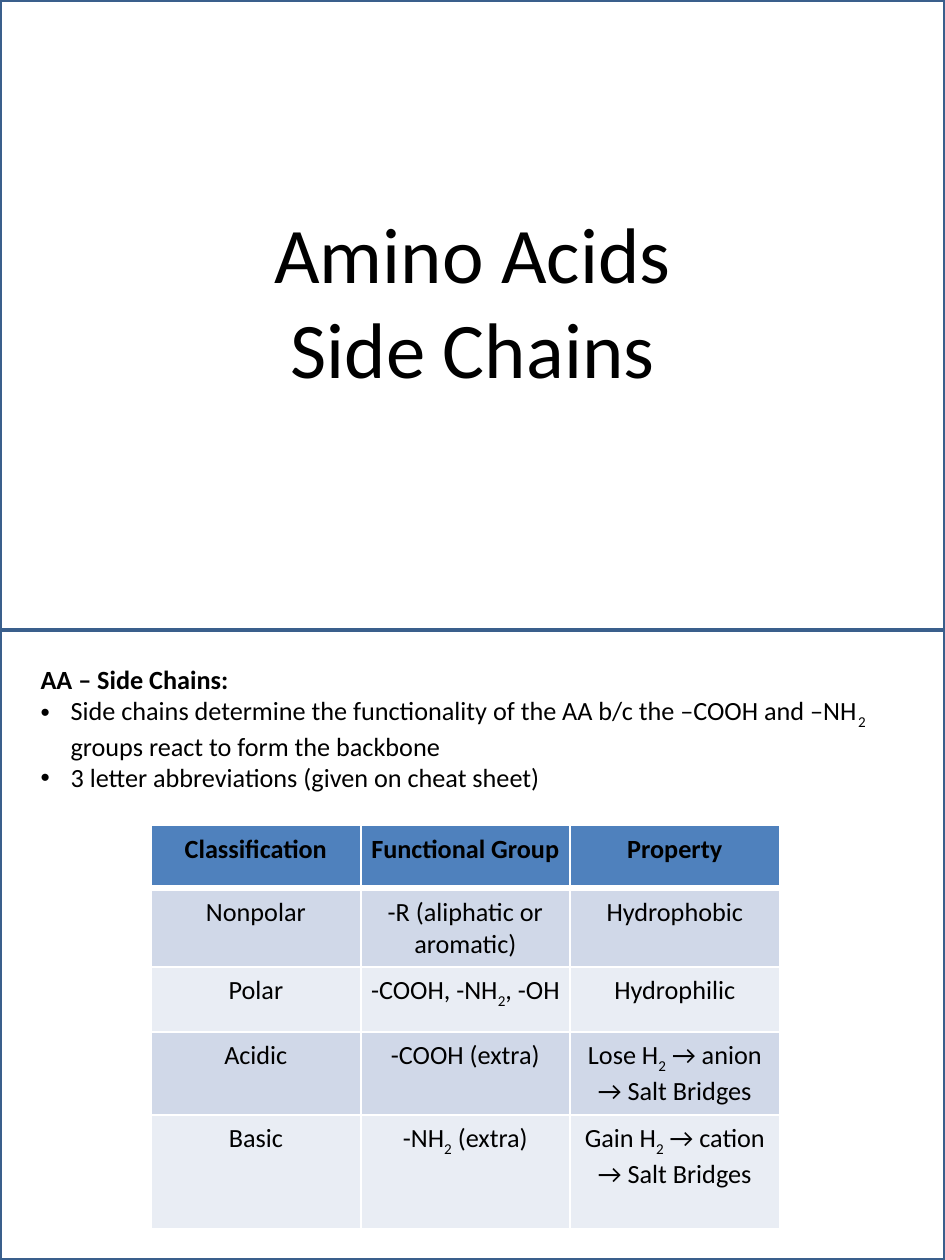
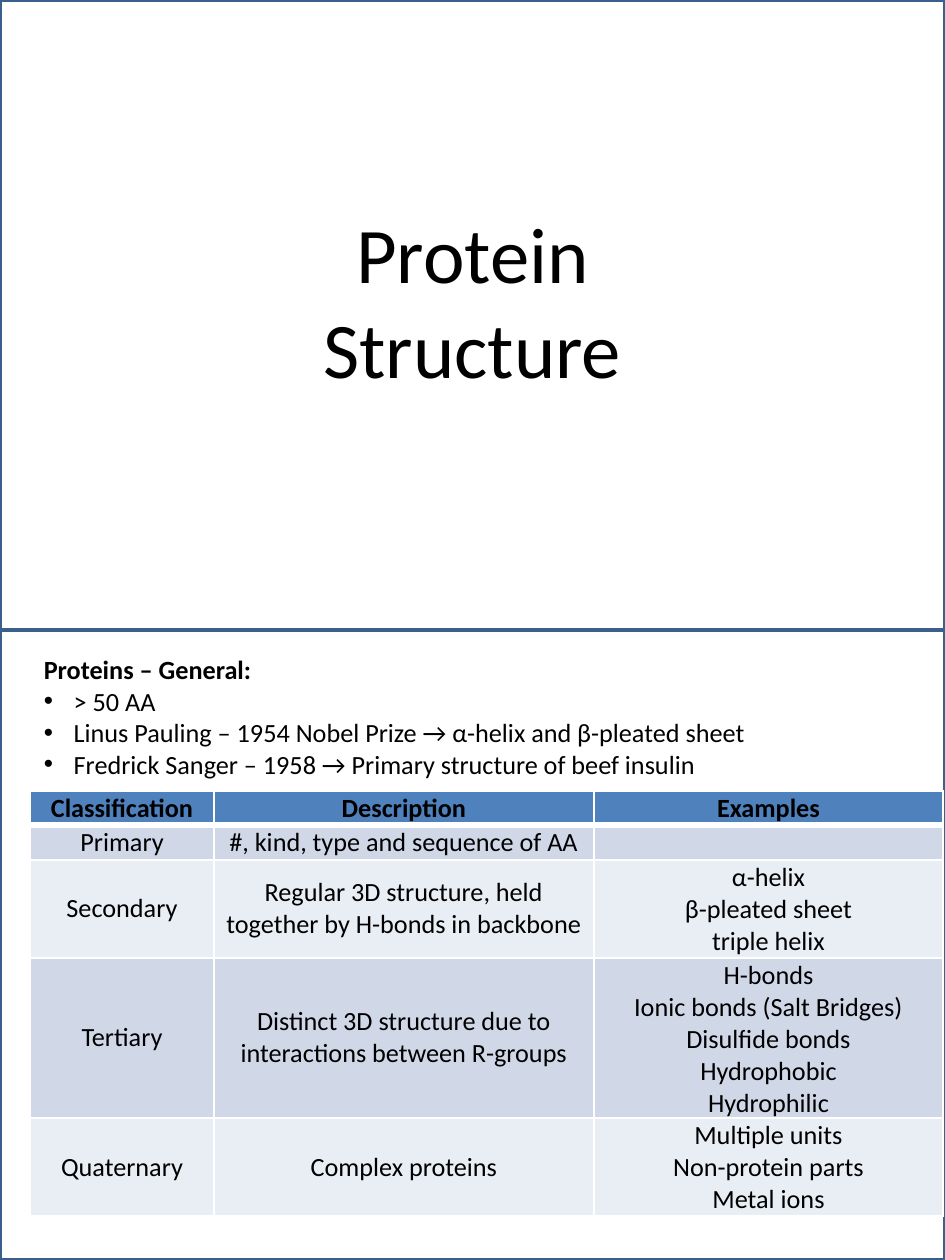
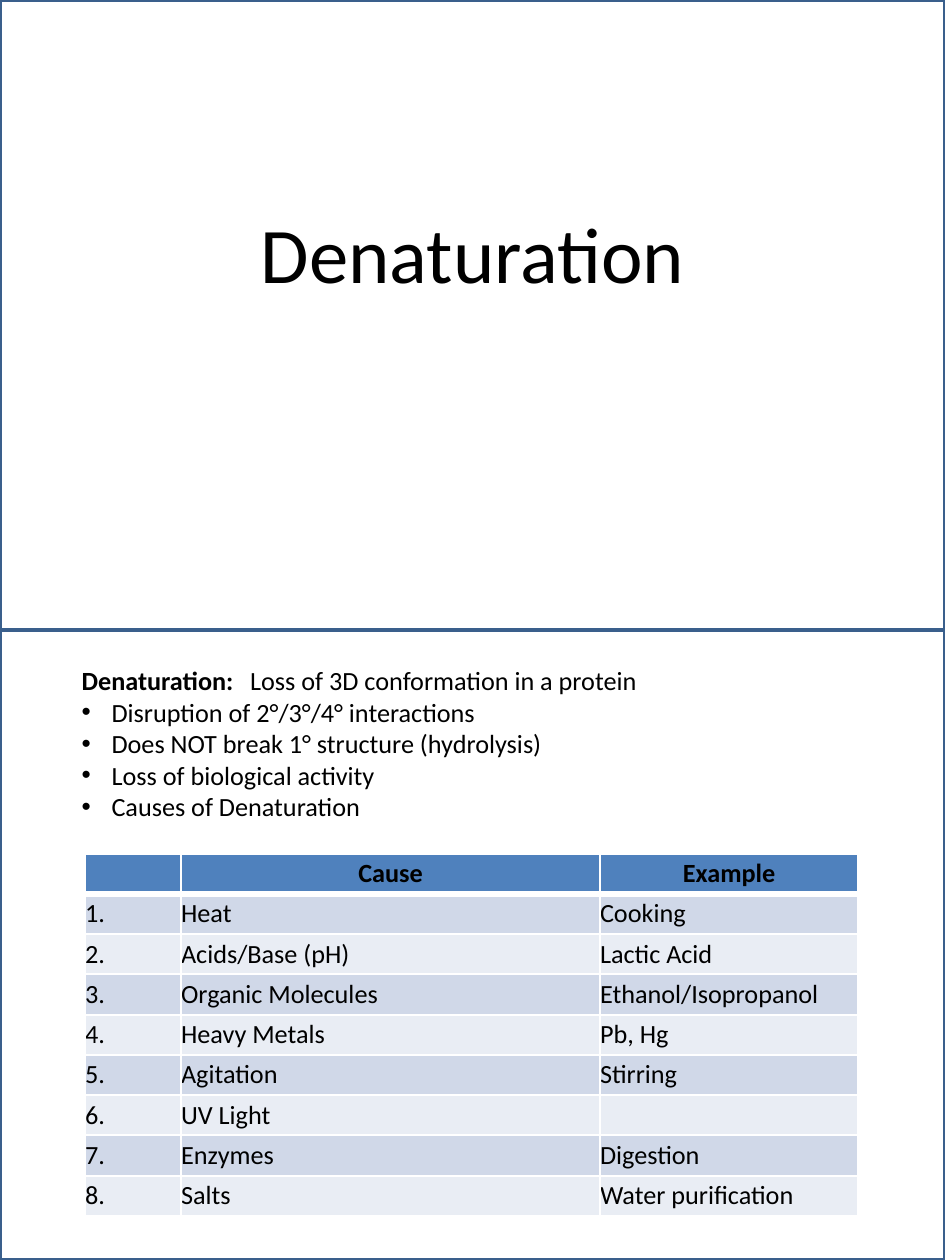
from lxml import etree
from pptx import Presentation
from pptx.dml.color import RGBColor
from pptx.enum import shapes, text
from pptx.oxml import ns
from pptx.util import Inches, Pt

BLACK = RGBColor(0, 0, 0)
WHITE = RGBColor(0xFF, 0xFF, 0xFF)
FRAME = RGBColor(0x3A, 0x5F, 0x8C)
RULE = RGBColor(0x4B, 0x7E, 0xBC)
HEAD = RGBColor(0x4F, 0x81, 0xBD)
BANDS = RGBColor(0xD0, 0xD8, 0xE8), RGBColor(0xE9, 0xED, 0xF4)
FONT = "Calibri"
WIDE, HALF = 6, 4  # each slide is two stacked panels
LEFT, MID = text.PP_ALIGN.LEFT, text.PP_ALIGN.CENTER

# Content: ~ encloses a subscript, a line break starts a paragraph
SLIDES = [
    dict(
        title="Amino Acids\nSide Chains",
        notes=(0.16, 4.16, 5.5, 0.91),
        lead=("AA – Side Chains:", ""),
        points=["Side chains determine the functionality of the AA b/c the "
                "–COOH and –NH~2~ groups react to form the backbone",
                "3 letter abbreviations (given on cheat sheet)"],
        spot=(0.96, 5.24), cols=[1.33] * 3,
        rows=[0.4, 0.5, 0.41, 0.53, 0.72],
        inset=(0.05, 0.05), anchor=text.MSO_ANCHOR.TOP, align=MID,
        cells=[
            ("Classification", "Functional Group", "Property"),
            ("Nonpolar", "-R (aliphatic or aromatic)", "Hydrophobic"),
            ("Polar", "-COOH, -NH~2~, -OH", "Hydrophilic"),
            ("Acidic", "-COOH (extra)", "Lose H~2~ → anion → Salt Bridges"),
            ("Basic", "-NH~2~ (extra)", "Gain H~2~ → cation → Salt Bridges"),
        ]),
    dict(
        title="Protein\nStructure",
        notes=(0.18, 4.1, 5.64, 0.91),
        lead=("Proteins – General:", ""),
        points=["> 50 AA",
                "Linus Pauling – 1954 Nobel Prize → α-helix and β-pleated sheet",
                "Fredrick Sanger – 1958 → Primary structure of beef insulin"],
        spot=(0.19, 5.02), cols=[1.17, 2.41, 2.22],
        rows=[0.22, 0.22, 0.62, 1.02, 0.62],
        inset=(0.05, 0.01), anchor=text.MSO_ANCHOR.MIDDLE, align=MID,
        cells=[
            ("Classification", "Description", "Examples"),
            ("Primary", "#, kind, type and sequence of AA", ""),
            ("Secondary",
             "Regular 3D structure, held together by H-bonds in backbone",
             "α-helix\nβ-pleated sheet\ntriple helix"),
            ("Tertiary",
             "Distinct 3D structure due to interactions between R-groups",
             "H-bonds\nIonic bonds (Salt Bridges)\nDisulfide bonds\n"
             "Hydrophobic\nHydrophilic"),
            ("Quaternary", "Complex proteins",
             "Multiple units\nNon-protein parts\nMetal ions"),
        ]),
    dict(
        title="Denaturation",
        notes=(0.42, 4.17, 5, 1.11),
        lead=("Denaturation:", "\tLoss of 3D conformation in a protein"),
        points=["Disruption of 2°/3°/4° interactions",
                "Does NOT break 1° structure (hydrolysis)",
                "Loss of biological activity",
                "Causes of Denaturation"],
        spot=(0.54, 5.42), cols=[0.61, 2.66, 1.64], rows=[2.3 / 9] * 9,
        inset=(0, 0), anchor=text.MSO_ANCHOR.MIDDLE, align=LEFT,
        cells=[
            ("", "Cause", "Example"),
            ("1.", "Heat", "Cooking"),
            ("2.", "Acids/Base (pH)", "Lactic Acid"),
            ("3.", "Organic Molecules", "Ethanol/Isopropanol"),
            ("4.", "Heavy Metals", "Pb, Hg"),
            ("5.", "Agitation", "Stirring"),
            ("6.", "UV Light", ""),
            ("7.", "Enzymes", "Digestion"),
            ("8.", "Salts", "Water purification"),
        ]),
]


def sub(node, tag, **attrs):
    return etree.SubElement(node, ns.qn(tag), attrs)


def write(par, words, size=12, bold=False):
    for i, part in enumerate(words.split("~")):
        if not part:
            continue
        run = par.add_run()
        run.text = part
        font = run.font
        font.name, font.size, font.bold = FONT, Pt(size), bold
        font.color.rgb = BLACK
        if i % 2:
            run._r.get_or_add_rPr().set("baseline", "-25000")


def fill(frame, words, align, size=12, bold=False):
    for i, line in enumerate(words.split("\n")):
        par = frame.add_paragraph() if i else frame.paragraphs[0]
        par.alignment = align
        write(par, line, size, bold)
        if not line:  # keeps an empty cell's line low
            sub(par._p, "a:endParaRPr", sz="1200")


def frames(slide, layout):
    """Draw the panel frames and move them to the layout."""
    rule = slide.shapes.add_connector(
        shapes.MSO_CONNECTOR.STRAIGHT, 0, Inches(HALF), Inches(WIDE), Inches(HALF))
    rule.line.color.rgb, rule.line.width = RULE, Pt(1)
    sub(rule._element.spPr, "a:effectLst")
    parts = [rule]
    for top in (0, HALF):
        box = slide.shapes.add_shape(
            shapes.MSO_SHAPE.RECTANGLE, 0, Inches(top), Inches(WIDE), Inches(HALF))
        box.shadow.inherit = False
        box.fill.background()
        box.line.color.rgb, box.line.width = FRAME, Pt(2)
        parts.append(box)
    for part in parts:
        layout.shapes._spTree.append(part._element)


def title(slide, words):
    head = slide.shapes.title
    head.left, head.top = Inches(1.5), Inches(1.25)
    head.width, head.height = Inches(3), Inches(1.31)
    frame = head.text_frame
    frame.word_wrap, frame.auto_size = True, text.MSO_AUTO_SIZE.NONE
    frame.vertical_anchor = text.MSO_ANCHOR.TOP
    fill(frame, words, MID, 36)


def notes(slide, data):
    frame = slide.shapes.add_textbox(*map(Inches, data["notes"])).text_frame
    frame.word_wrap = True
    par = frame.paragraphs[0]
    term, rest = data["lead"]
    write(par, term, bold=True)
    write(par, rest)
    if rest:
        tabs = sub(par._p.get_or_add_pPr(), "a:tabLst")
        sub(tabs, "a:tab", pos=str(Inches(1.07)), algn="l")
    for point in data["points"]:
        par = frame.add_paragraph()
        write(par, point)
        props = par._p.get_or_add_pPr()
        props.set("marL", str(Inches(0.19)))
        props.set("indent", str(-Inches(0.19)))
        sub(props, "a:buFont", typeface="Arial")
        sub(props, "a:buChar", char="•")


def edge(cell, row):
    props = cell._tc.get_or_add_tcPr()
    for side in "LRTB":
        thick = (row, side) in ((0, "B"), (1, "T"))
        line = sub(props, "a:ln" + side, w=str(Pt(3 if thick else 1)))
        sub(sub(line, "a:solidFill"), "a:srgbClr", val=str(WHITE))


def grid(slide, data):
    cols, rows = data["cols"], data["rows"]
    table = slide.shapes.add_table(
        len(rows), len(cols), *map(Inches, data["spot"]),
        Inches(sum(cols)), Inches(sum(rows))).table
    table.horz_banding = False
    for col, width in zip(table.columns, cols):
        col.width = Inches(width)
    for r, (height, line) in enumerate(zip(rows, data["cells"])):
        table.rows[r].height = Inches(height)
        for c, words in enumerate(line):
            cell = table.cell(r, c)
            side, top = map(Inches, data["inset"])
            cell.margin_left = cell.margin_right = side
            cell.margin_top = cell.margin_bottom = top
            cell.vertical_anchor = data["anchor"]
            edge(cell, r)
            cell.fill.solid()
            cell.fill.fore_color.rgb = BANDS[(r - 1) % 2] if r else HEAD
            fill(cell.text_frame, words, data["align"] if r else MID, bold=not r)


def main():
    deck = Presentation()
    deck.slide_width, deck.slide_height = Inches(WIDE), Inches(2 * HALF)
    layout = deck.slide_layouts[5]  # title only
    for i, data in enumerate(SLIDES):
        slide = deck.slides.add_slide(layout)
        if not i:
            frames(slide, layout)
        title(slide, data["title"])
        notes(slide, data)
        grid(slide, data)
    deck.save("out.pptx")


if __name__ == "__main__":
    main()
